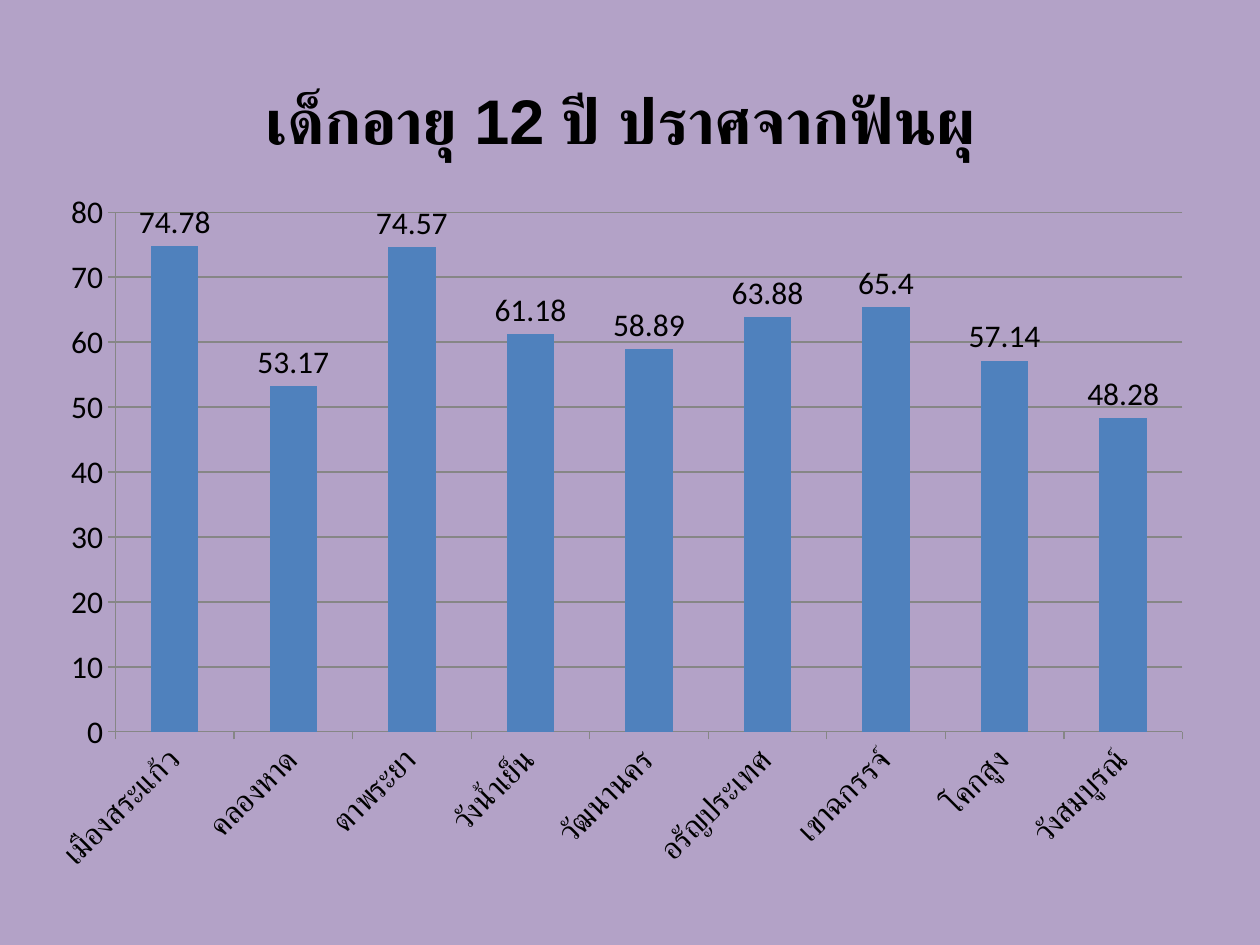
from pptx import Presentation
from pptx import util as u
from pptx.chart.data import CategoryChartData
from pptx.dml.color import RGBColor
from pptx.enum import chart as charts

COLORS = {"page": "B3A2C7", "bar": "4F81BD", "text": "000000", "line": "868686"}
TITLE = "เด็กอายุ 12 ปี ปราศจากฟันผุ"
DISTRICTS = {
    "เมืองสระแก้ว": 74.78,
    "คลองหาด": 53.17,
    "ตาพระยา": 74.57,
    "วังน้ำเย็น": 61.18,
    "วัฒนานคร": 58.89,
    "อรัญประเทศ": 63.88,
    "เขาฉกรรจ์": 65.4,
    "โคกสูง": 57.14,
    "วังสมบูรณ์": 48.28,
}


def color(name):
    return RGBColor.from_string(COLORS[name])


def style_font(font, size=18, bold=False, face="Calibri"):
    font.size = u.Pt(size)
    font.bold = bold
    font.name = face
    font.color.rgb = color("text")


def write(frame, words, **style):
    span = frame.paragraphs[0].add_run()
    span.text = words
    style_font(span.font, **style)


class SlideBuilder:
    def __init__(self, deck):
        self.page = deck.slides.add_slide(deck.slide_layouts[6])
        fill = self.page.background.fill
        fill.solid()
        fill.fore_color.rgb = color("page")

    def style_line(self, line):
        line.color.rgb = color("line")
        line.width = u.Pt(0.75)

    def style_axis(self, axis):
        axis.major_tick_mark = charts.XL_TICK_MARK.OUTSIDE
        axis.minor_tick_mark = charts.XL_TICK_MARK.NONE
        style_font(axis.tick_labels.font)
        self.style_line(axis.format.line)

    def column_chart(self, title, values, left, top, width, height):
        data = CategoryChartData()
        data.categories = list(values)
        data.add_series(title, list(values.values()))
        chart = self.page.shapes.add_chart(
            charts.XL_CHART_TYPE.COLUMN_CLUSTERED,
            u.Inches(left), u.Inches(top), u.Inches(width), u.Inches(height), data,
        ).chart
        style_font(chart.font)
        chart.has_legend = False
        chart.has_title = True
        write(chart.chart_title.text_frame, title, size=36, bold=True, face="Arial")
        chart.chart_title.include_in_layout = False

        self.style_axis(chart.category_axis)
        labels_body = chart.category_axis.tick_labels.font._element.getparent().getparent().getparent()
        labels_body.bodyPr.set("rot", "-2700000")

        scale = chart.value_axis
        self.style_axis(scale)
        scale.minimum_scale, scale.maximum_scale, scale.major_unit = 0, 80, 10
        scale.has_major_gridlines = True
        self.style_line(scale.major_gridlines.format.line)

        plot = chart.plots[0]
        plot.gap_width = 150
        plot.vary_by_categories = False
        plot.has_data_labels = True
        labels = plot.data_labels
        labels.show_value = True
        labels.position = charts.XL_LABEL_POSITION.OUTSIDE_END
        style_font(labels.font)
        fill = plot.series[0].format.fill
        fill.solid()
        fill.fore_color.rgb = color("bar")


def main():
    deck = Presentation()
    deck.slide_width, deck.slide_height = u.Inches(10), u.Inches(7.5)
    SlideBuilder(deck).column_chart(TITLE, DISTRICTS, 0.28, 0.36, 9.29, 6.69)
    deck.save("out.pptx")


if __name__ == "__main__":
    main()
